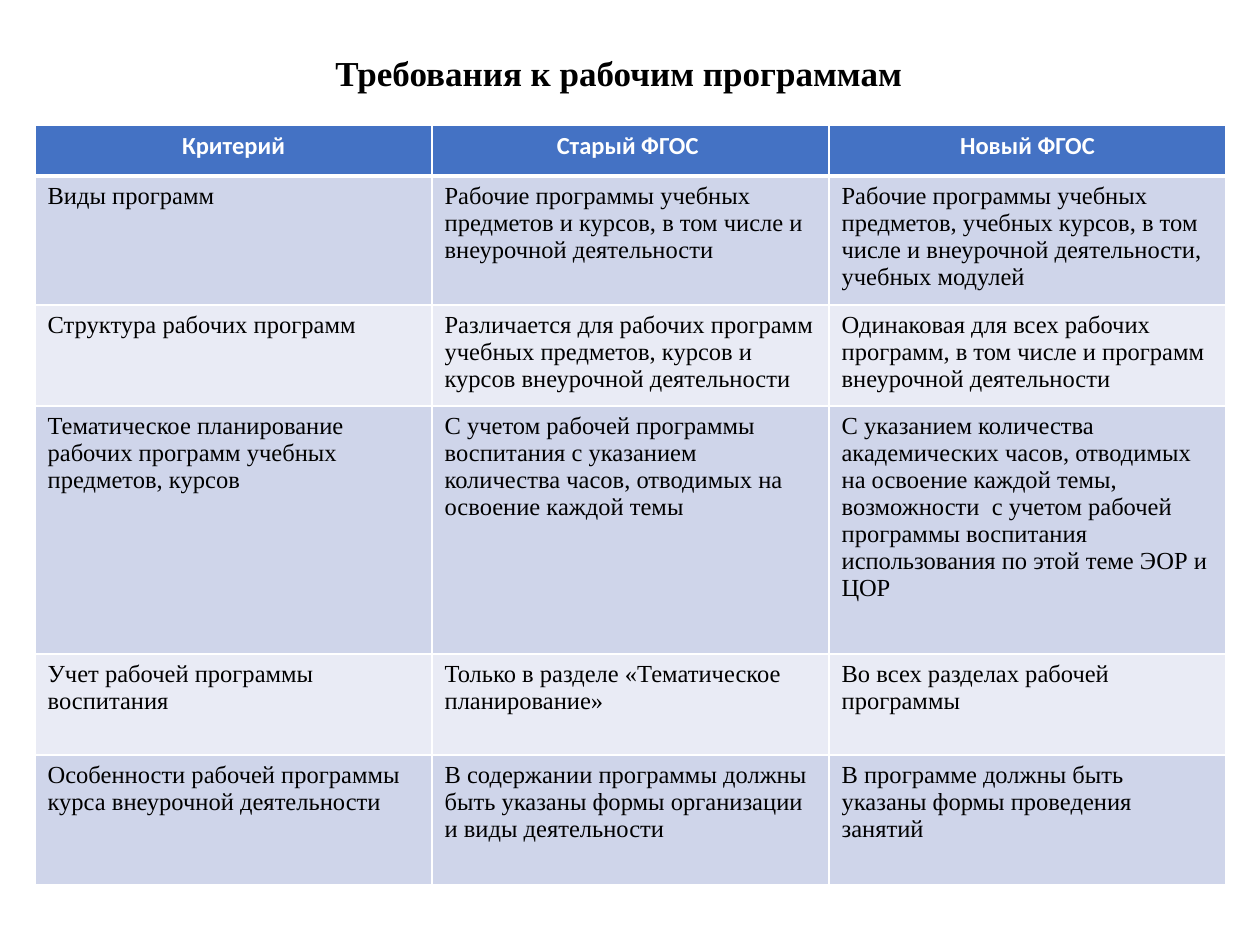
from pptx import Presentation
from pptx.dml.color import RGBColor
from pptx.enum.text import MSO_AUTO_SIZE, PP_ALIGN
from pptx.oxml.xmlchemy import OxmlElement
from pptx.util import Emu, Pt

THEME = {
    "header": "4472C4", "bands": ["CFD5EA", "E9EBF5"], "rule": "FFFFFF",
    "title": {"name": "Times New Roman", "size": Pt(20), "bold": True, "color": "000000"},
    "head": {"name": "Calibri", "size": Pt(14), "bold": True, "color": "FFFFFF"},
    "body": {"name": "Times New Roman", "size": Pt(14), "bold": False, "color": "000000"},
}
SCALE = 914400 / 126  # EMU in one px


def px(*lengths):
    return [Emu(round(length * SCALE)) for length in lengths]


def write(para, text, style):
    span = para.add_run()
    span.text = text
    for name, value in style.items():
        if name == "color":
            span.font.color.rgb = RGBColor.from_string(value)
        else:
            setattr(span.font, name, value)


deck = Presentation()
deck.slide_width, deck.slide_height = px(1260, 945)
page = deck.slides.add_slide(deck.slide_layouts[6])

# Criteria table
rows = [
    ["Критерий", "Старый ФГОС ", "Новый ФГОС"],
    ["Виды программ",
     "Рабочие программы учебных предметов и курсов, в том числе и внеурочной деятельности",
     "Рабочие программы учебных предметов, учебных курсов, в том числе и внеурочной "
     "деятельности, учебных модулей"],
    ["Структура рабочих программ",
     "Различается для рабочих программ учебных предметов, курсов и курсов внеурочной деятельности",
     "Одинаковая для всех рабочих программ, в том числе и программ внеурочной деятельности"],
    ["Тематическое планирование рабочих программ учебных предметов, курсов",
     "С учетом рабочей программы воспитания с указанием количества часов, отводимых на "
     "освоение каждой темы",
     "С указанием количества академических часов, отводимых на освоение каждой темы, "
     "возможности  с учетом рабочей программы воспитания использования по этой теме ЭОР и ЦОР"],
    ["Учет рабочей программы воспитания",
     "Только в разделе «Тематическое планирование»",
     "Во всех разделах рабочей программы"],
    ["Особенности рабочей программы курса внеурочной деятельности",
     "В содержании программы должны быть указаны формы организации и виды деятельности",
     "В программе должны быть указаны формы проведения занятий"],
]
row_heights = px(51, 129, 101, 248, 101, 130)
table = page.shapes.add_table(len(rows), 3, *px(35, 125, 1191, 760)).table
for column in table.columns:
    column.width = px(397)[0]

for row_index, texts in enumerate(rows):
    table.rows[row_index].height = row_heights[row_index]
    is_head = row_index == 0
    fill = THEME["header"] if is_head else THEME["bands"][(row_index - 1) % 2]
    for column_index, text in enumerate(texts):
        cell = table.cell(row_index, column_index)
        para = cell.text_frame.paragraphs[0]
        para.alignment = PP_ALIGN.CENTER if is_head else PP_ALIGN.LEFT
        write(para, text, THEME["head" if is_head else "body"])

        # White borders, with a thick rule under the header
        properties = cell._tc.get_or_add_tcPr()
        for side in "LRTB":
            thick = (row_index, side) in [(0, "B"), (1, "T")]
            line = OxmlElement(f"a:ln{side}")
            line.set("w", str(Pt(3 if thick else 1)))
            solid = OxmlElement("a:solidFill")
            color = OxmlElement("a:srgbClr")
            color.set("val", THEME["rule"])
            solid.append(color)
            line.append(solid)
            properties.append(line)
        cell.fill.solid()
        cell.fill.fore_color.rgb = RGBColor.from_string(fill)

# Title
box = page.shapes.add_textbox(*px(323, 45, 648, 55))
box.text_frame.word_wrap = True
box.text_frame.auto_size = MSO_AUTO_SIZE.SHAPE_TO_FIT_TEXT
write(box.text_frame.paragraphs[0], "Требования к рабочим программам", THEME["title"])

deck.save("out.pptx")
